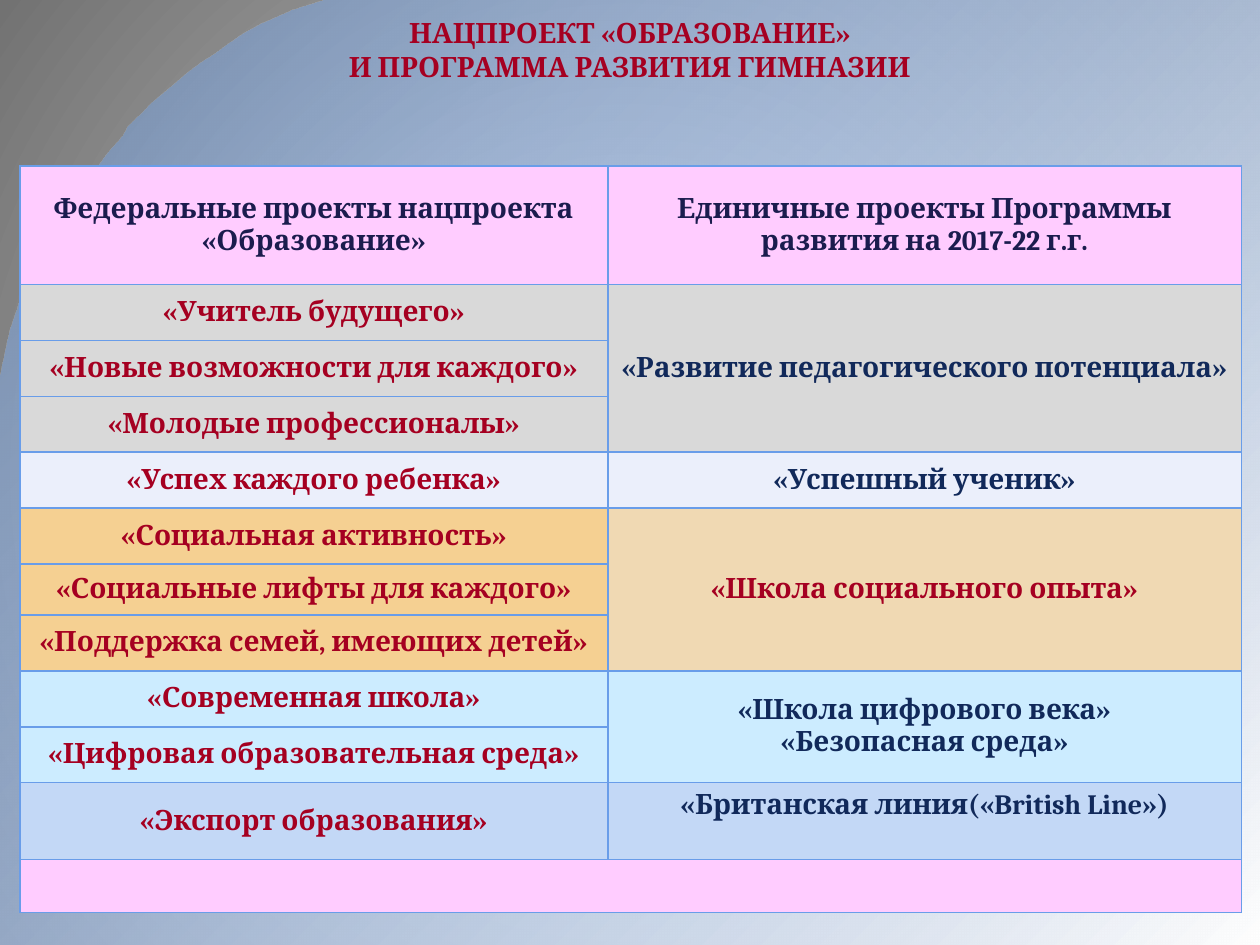
import pptx
import pptx.dml.color
import pptx.enum.shapes
import pptx.enum.text
import pptx.oxml
import pptx.oxml.ns
import pptx.util

Pt = pptx.util.Pt
ANCHOR = pptx.enum.text.MSO_ANCHOR

COLORS = {
    "red": "A50021", "navy": "11295A", "ink": "1B1C4E", "border": "699DE9",
    "pink": "FFCCFF", "grey": "D9D9D9", "pale": "EBEFFB", "orange": "F5D092",
    "sand": "F0D9B3", "sky": "CCECFF", "blue": "C3D8F6",
    "light": "CFCFCF", "dark": "727272", "white": "FFFFFF",
}
WIDTH, HEIGHT = 720, 540
TITLE = ["НАЦПРОЕКТ «ОБРАЗОВАНИЕ»", "И ПРОГРАММА РАЗВИТИЯ ГИМНАЗИИ"]
HEADERS = ["Федеральные проекты нацпроекта «Образование»",
           "Единичные проекты Программы развития на 2017-22 г.г."]
# federal projects, their fill, school projects, their fill, colour and anchor
GROUPS = [
    (["«Учитель будущего»", "«Новые возможности для каждого»", "«Молодые профессионалы»"],
     "grey", ["«Развитие педагогического потенциала»"], "grey", "navy", ANCHOR.MIDDLE),
    (["«Успех каждого ребенка»"],
     "pale", ["«Успешный ученик»"], "pale", "navy", ANCHOR.MIDDLE),
    (["«Социальная активность»", "«Социальные лифты для каждого»",
      "«Поддержка семей, имеющих детей»"],
     "orange", ["«Школа социального опыта»"], "sand", "red", ANCHOR.MIDDLE),
    (["«Современная школа»", "«Цифровая образовательная среда»"],
     "sky", ["«Школа цифрового века»", "«Безопасная среда»"], "sky", "navy", ANCHOR.MIDDLE),
    (["«Экспорт образования»"],
     "blue", ["«Британская линия(«British Line»)"], "blue", "navy", ANCHOR.TOP),
]
TABLE_LEFT, TABLE_TOP = 11.3, 95
COLUMN_WIDTHS = [336, 362]
ROW_HEIGHTS = [67.5] + [32] * 5 + [29] + [32] * 3 + [44, 30.3]
# Bezier curves of the panel's rounded corner, each starting where the last ended
CORNER_START = (186, 0)
CORNER_CURVES = [
    [(136.8, 11.5), (83.5, 59.8), (70.6, 77)],
    [(57.6, 95), (11.5, 139.7), (0, 216.7)],
]


def rgb(name):
    return pptx.dml.color.RGBColor.from_string(COLORS[name])


def set_gradient(fill, parent, stops, direction):
    """Fill with stops of (position %, colour, opacity %) along a direction element."""
    fill.gradient()
    old = next(parent.iter(pptx.oxml.ns.qn("a:gradFill")))
    marks = "".join(
        f'<a:gs pos="{position * 1000}"><a:srgbClr val="{COLORS[color]}">'
        f'<a:alpha val="{opacity * 1000}"/></a:srgbClr></a:gs>'
        for position, color, opacity in stops)
    old.getparent().replace(old, pptx.oxml.parse_xml(
        f'<a:gradFill {pptx.oxml.ns.nsdecls("a")} rotWithShape="1">'
        f'<a:gsLst>{marks}</a:gsLst>{direction}</a:gradFill>'))


def curve_points(start, controls, steps=16):
    points = [start, *controls]
    for step in range(1, steps + 1):
        t = step / steps
        weights = [(1 - t) ** 3, 3 * t * (1 - t) ** 2, 3 * t * t * (1 - t), t ** 3]
        yield tuple(sum(w * p[axis] for w, p in zip(weights, points)) for axis in (0, 1))


def add_panel(page):
    outline, start = [], CORNER_START
    for controls in CORNER_CURVES:
        outline += curve_points(start, controls)
        start = controls[-1]
    outline += [(0, HEIGHT), (WIDTH, HEIGHT), (WIDTH, 0)]
    builder = page.shapes.build_freeform(*CORNER_START, scale=Pt(1))
    builder.add_line_segments(outline, close=True)
    panel = builder.convert_to_shape()
    panel.shadow.inherit = False
    panel.line.fill.background()
    set_gradient(panel.fill, panel._element,
                 [(0, "border", 39), (100, "white", 100)],
                 '<a:lin ang="2700000" scaled="0"/>')


def write_lines(frame, lines, color):
    looks = {"name": "Cambria", "size": Pt(16), "bold": True}
    for index, line in enumerate(lines):
        para = frame.paragraphs[0] if index == 0 else frame.add_paragraph()
        para.alignment = pptx.enum.text.PP_ALIGN.CENTER
        span = para.add_run()
        span.text = line
        for key, value in looks.items():
            setattr(span.font, key, value)
        span.font.color.rgb = rgb(color)


def add_title(page):
    box = page.shapes.add_textbox(Pt(36), Pt(6), Pt(648), Pt(44.6))
    box.text_frame.word_wrap = True
    box.text_frame.vertical_anchor = ANCHOR.MIDDLE
    write_lines(box.text_frame, TITLE, "red")


def style_cell(cell, fill):
    cell.fill.solid()
    cell.fill.fore_color.rgb = rgb(fill)
    properties = cell._tc.get_or_add_tcPr()
    for index, side in enumerate(("lnL", "lnR", "lnT", "lnB")):
        properties.insert(index, pptx.oxml.parse_xml(
            f'<a:{side} {pptx.oxml.ns.nsdecls("a")} w="12700"><a:solidFill>'
            f'<a:srgbClr val="{COLORS["border"]}"/></a:solidFill></a:{side}>'))


def fill_cell(cell, lines, color, anchor=ANCHOR.MIDDLE):
    cell.vertical_anchor = anchor
    write_lines(cell.text_frame, lines, color)


def add_projects_table(page):
    table = page.shapes.add_table(
        len(ROW_HEIGHTS), len(COLUMN_WIDTHS), Pt(TABLE_LEFT), Pt(TABLE_TOP),
        Pt(sum(COLUMN_WIDTHS)), Pt(sum(ROW_HEIGHTS))).table
    for column, width in zip(table.columns, COLUMN_WIDTHS):
        column.width = Pt(width)
    for row, height in zip(table.rows, ROW_HEIGHTS):
        row.height = Pt(height)

    fills = [("pink", "pink")]
    for column, header in enumerate(HEADERS):
        fill_cell(table.cell(0, column), [header], "ink")
    for federal, left_fill, school, right_fill, color, anchor in GROUPS:
        first = len(fills)
        for offset, project in enumerate(federal):
            fill_cell(table.cell(first + offset, 0), [project], "red")
            fills.append((left_fill, right_fill))
        fill_cell(table.cell(first, 1), school, color, anchor)
        if len(federal) > 1:
            table.cell(first, 1).merge(table.cell(len(fills) - 1, 1))
    fills.append(("pink", "pink"))
    last = len(fills) - 1
    table.cell(last, 0).merge(table.cell(last, 1))

    for row, pair in enumerate(fills):
        for column, fill in enumerate(pair):
            style_cell(table.cell(row, column), fill)


def main():
    deck = pptx.Presentation()
    deck.slide_width, deck.slide_height = Pt(WIDTH), Pt(HEIGHT)
    page = deck.slides.add_slide(deck.slide_layouts[6])
    set_gradient(page.background.fill, page._element,
                 [(0, "light", 100), (100, "dark", 100)],
                 '<a:path path="circle"><a:fillToRect l="50000" t="50000" '
                 'r="50000" b="50000"/></a:path>')
    add_panel(page)
    add_title(page)
    add_projects_table(page)
    deck.save("out.pptx")


if __name__ == "__main__":
    main()
